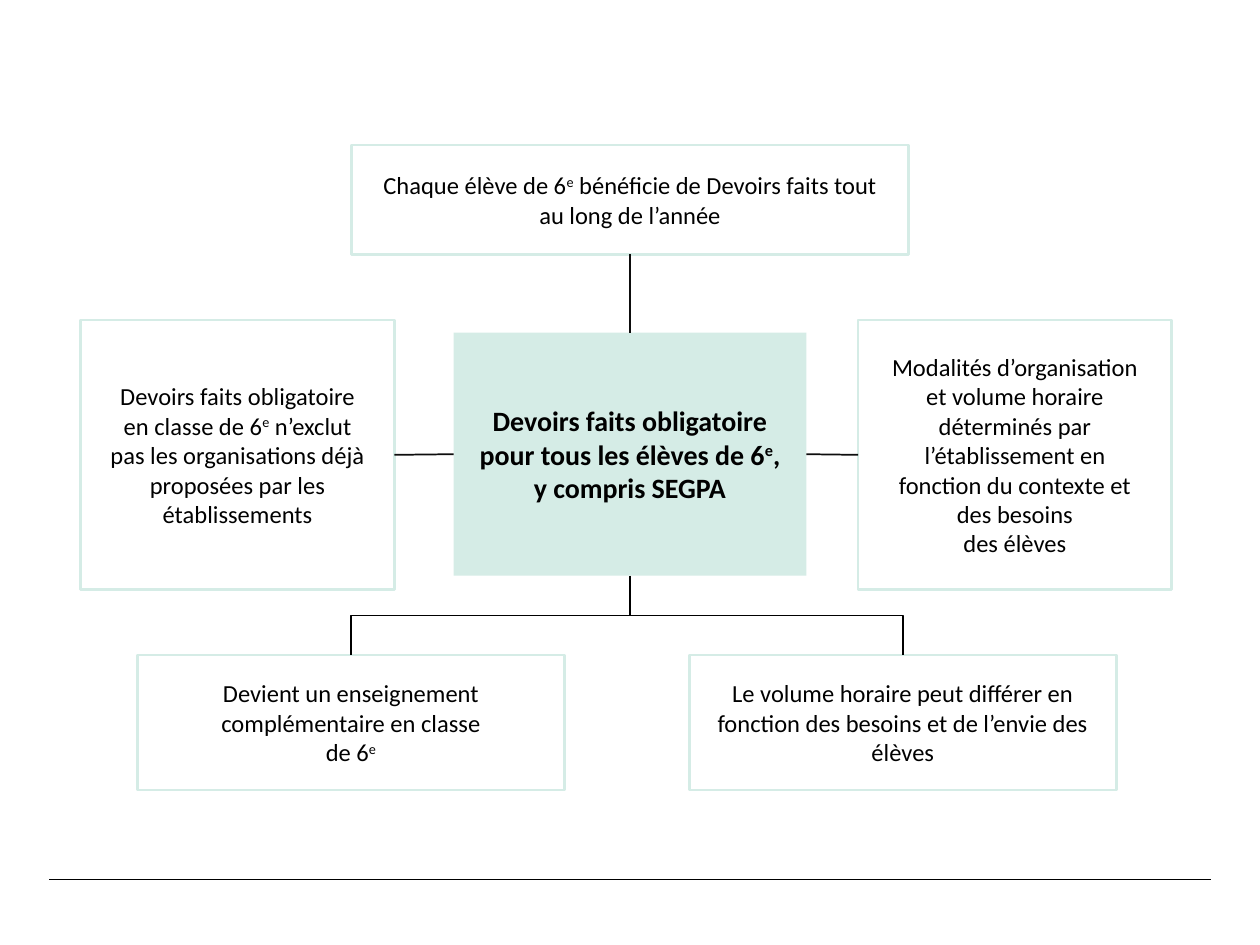
from pptx import Presentation
from pptx.dml.color import RGBColor
from pptx.enum.shapes import MSO_CONNECTOR, MSO_SHAPE
from pptx.enum.text import MSO_ANCHOR, PP_ALIGN
from pptx.oxml.ns import qn
from pptx.oxml.xmlchemy import OxmlElement
from pptx.util import Inches, Pt

RECTANGLE = MSO_SHAPE.RECTANGLE
STRAIGHT = MSO_CONNECTOR.STRAIGHT
ELBOW = MSO_CONNECTOR.ELBOW
CENTER = PP_ALIGN.CENTER
MIDDLE = MSO_ANCHOR.MIDDLE
TOP, LEFT, BOTTOM, RIGHT = range(4)

MINT = RGBColor(0xD5, 0xEC, 0xE6)
BLACK = RGBColor(0x00, 0x00, 0x00)
NEAR_BLACK = RGBColor(0x0D, 0x0D, 0x0D)

FONT = "Calibri"
PADDING = Inches(0.2)
SUPERSCRIPT_E = ("e", True)


def add_text(shape, runs, size, bold):
    frame = shape.text_frame
    frame.word_wrap = True
    frame.vertical_anchor = MIDDLE
    frame.margin_left = frame.margin_right = PADDING
    frame.margin_top = frame.margin_bottom = PADDING
    paragraph = frame.paragraphs[0]
    paragraph.alignment = CENTER
    for text, superscript in runs:
        for index, line in enumerate(text.split("\n")):
            if index:
                paragraph.add_line_break()
            run = paragraph.add_run()
            run.text = line
            run.font.name = FONT
            run.font.size = Pt(size)
            run.font.bold = bold
            run.font.color.rgb = BLACK
            if superscript:
                run.font._element.set("baseline", "30000")


def add_box(slide, box, runs, central=False):
    shape = slide.shapes.add_shape(RECTANGLE, *map(Inches, box))
    shape.shadow.inherit = False
    if central:
        shape.fill.solid()
        shape.fill.fore_color.rgb = MINT
        shape.line.fill.background()
    else:
        shape.fill.background()
        shape.line.color.rgb = MINT
        shape.line.width = Pt(1.5)
    add_text(shape, runs, 16 if central else 14, central)
    return shape


def add_line(slide, kind, start, end, color, width):
    connector = slide.shapes.add_connector(kind, *start, *end)
    connector.line.color.rgb = color
    connector.line.width = Pt(width)
    connector._element.spPr.append(OxmlElement("a:effectLst"))
    return connector


def join_straight(slide, first, first_side, second, second_side):
    connector = add_line(slide, STRAIGHT, (0, 0), (0, 0), NEAR_BLACK, 1)
    connector.begin_connect(first, first_side)
    connector.end_connect(second, second_side)


def join_below(slide, parent, child):
    connector = add_line(slide, ELBOW, (0, 0), (0, 0), BLACK, 1)
    connector.begin_connect(parent, BOTTOM)
    connector.end_connect(child, TOP)
    start_x, start_y = connector.begin_x, connector.begin_y
    end_x, end_y = connector.end_x, connector.end_y
    drop, span = end_y - start_y, abs(end_x - start_x)
    connector.left = (start_x + end_x - drop) // 2
    connector.top = (start_y + end_y - span) // 2
    connector.width, connector.height = drop, span
    goes_right = end_x > start_x
    transform = connector._element.spPr.find(qn("a:xfrm"))
    transform.set("rot", str((270 if goes_right else 90) * 60000))
    transform.set("flipH", "1" if goes_right else "0")
    transform.set("flipV", "0")


def add_diagram(slide, box):
    left, top, width, height = box
    middle = left + width / 2
    side_width, side_height, side_top = 2.49, 2.14, top + 1.39
    lower_width, lower_height, lower_inset = 3.39, 1.07, 0.45
    lower_top = top + height - lower_height

    center = add_box(slide, (3.6, top + 1.49, 2.8, 1.93), [
        ("Devoirs faits obligatoire pour tous les élèves de 6", False),
        SUPERSCRIPT_E,
        (",\ny compris SEGPA", False),
    ], central=True)
    upper = add_box(slide, (2.79, top, 4.42, 0.87), [
        ("Chaque élève de 6", False),
        SUPERSCRIPT_E,
        (" bénéficie de Devoirs faits tout au long de l’année", False),
    ])
    lower_right = add_box(
        slide, (middle + 0.5, lower_top, lower_width, lower_height), [
            ("Le volume horaire peut différer en fonction des besoins "
             "et de l’envie des élèves", False),
        ])
    lower_left = add_box(
        slide, (left + lower_inset, lower_top, lower_width, lower_height), [
            ("Devient un enseignement complémentaire en classe\nde 6", False),
            SUPERSCRIPT_E,
        ])
    right_side = add_box(
        slide, (left + width - side_width, side_top, side_width, side_height), [
            ("Modalités d’organisation\net volume horaire déterminés par "
             "l’établissement en fonction du contexte et des besoins\n"
             "des élèves", False),
        ])
    left_side = add_box(slide, (left, side_top, side_width, side_height), [
        ("Devoirs faits obligatoire en classe de 6", False),
        SUPERSCRIPT_E,
        (" n’exclut pas les organisations déjà proposées par les "
         "établissements", False),
    ])

    join_straight(slide, upper, BOTTOM, center, TOP)
    join_straight(slide, right_side, LEFT, center, RIGHT)
    join_straight(slide, center, LEFT, left_side, RIGHT)
    for child in (lower_right, lower_left):
        join_below(slide, center, child)


def add_footer_rule(slide, left, top, width):
    start = (Inches(left), Inches(top))
    end = (Inches(left + width), Inches(top))
    add_line(slide, STRAIGHT, start, end, BLACK, 0.8)


def main():
    presentation = Presentation()
    presentation.slide_width = Inches(10)
    presentation.slide_height = Inches(7.5)
    slide = presentation.slides.add_slide(presentation.slide_layouts[6])
    add_footer_rule(slide, 0.39, 6.98, 9.22)
    add_diagram(slide, (0.64, 1.15, 8.66, 5.12))
    presentation.save("out.pptx")


if __name__ == "__main__":
    main()
